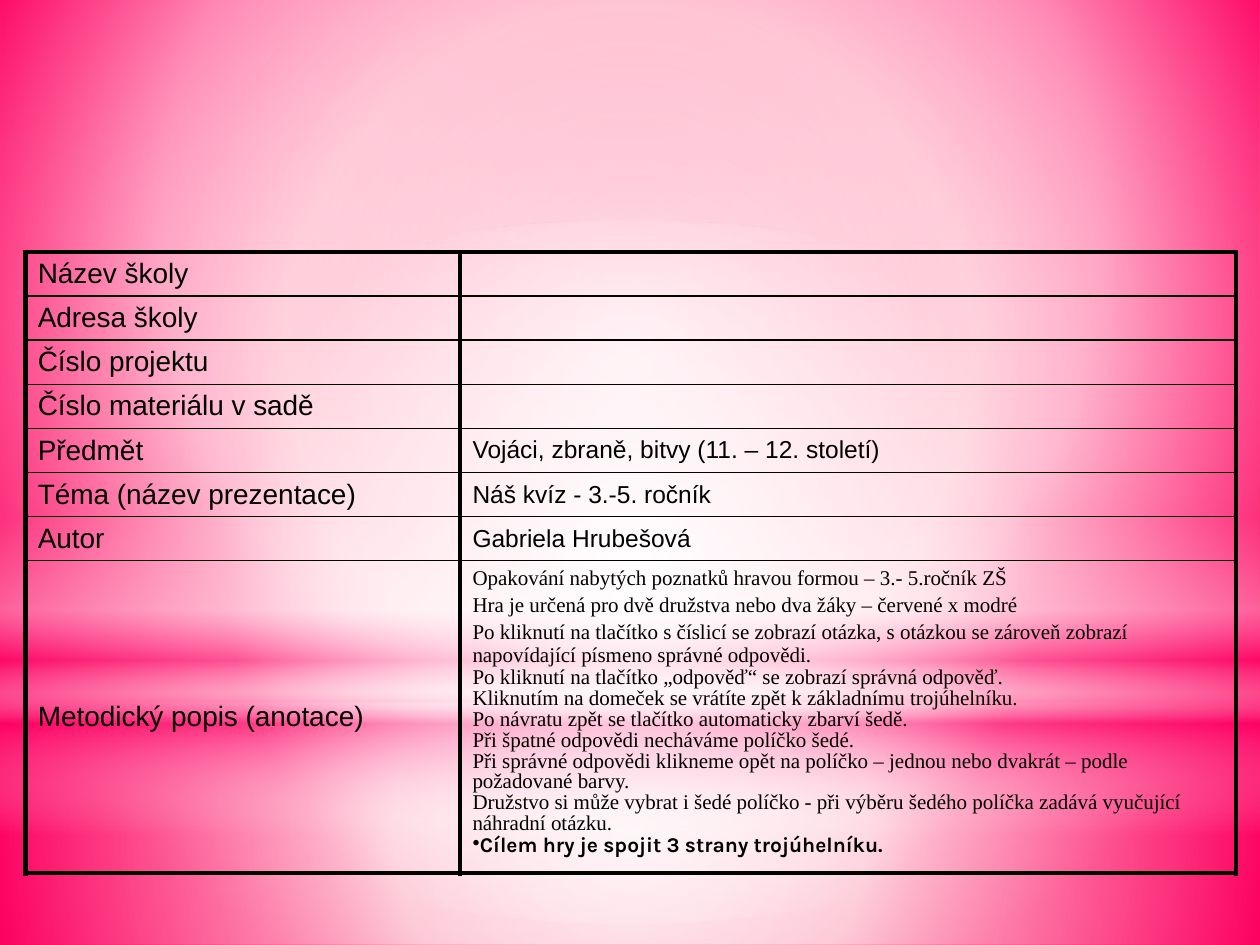
import lxml.etree
import pptx
import pptx.dml.color
import pptx.enum.shapes
import pptx.enum.text
import pptx.oxml.ns
import pptx.util

Inches = pptx.util.Inches
qn = pptx.oxml.ns.qn

COLORS = {"ink": "000000", "white": "FFFFFF", "pink": "FF0066",
          "rose": "FF2163", "blush": "FFA7BD", "crimson": "F80045"}

# Gradient stops: position, colour, opacity (all percentages)
BACKGROUND = [(0, "rose", 100), (60, "blush", 100), (100, "crimson", 100)]
CENTER = (50, 50, 50, 50)
# Shape, (left, top, width, height), stops, focus (None means a vertical linear gradient)
GLOWS = [
    ("RECTANGLE", (0, 5.58, 10, 1.92),
     [(0, "white", 91), (37, "white", 76), (100, "pink", 79)], CENTER),
    ("RECTANGLE", (0, 0, 10, 5.58),
     [(0, "white", 89), (48, "white", 62), (100, "pink", 79)], CENTER),
    ("RECTANGLE", (0, 4.12, 10, 2.5),
     [(0, "white", 0), (29, "white", 30), (45, "pink", 40), (55, "white", 26),
      (65, "pink", 60), (100, "white", 0)], None),
    ("OVAL", (0, 1.75, 10, 5.58), [(0, "white", 100), (56, "white", 0)], CENTER),
]

ROWS = [
    ("Název školy", ""),
    ("Adresa školy", ""),
    ("Číslo projektu", ""),
    ("Číslo materiálu v sadě", ""),
    ("Předmět", "Vojáci, zbraně, bitvy (11. – 12. století)"),
    ("Téma (název prezentace)", "Náš kvíz - 3.-5. ročník"),
    ("Autor", "Gabriela Hrubešová"),
]
NOTE_LABEL = "Metodický popis (anotace)"
INTRO = [
    "Opakování nabytých poznatků hravou formou – 3.- 5.ročník ZŠ",
    "Hra je určená pro dvě družstva nebo dva žáky – červené x modré",
    "Po kliknutí na tlačítko s číslicí se zobrazí otázka, s otázkou se zároveň "
    "zobrazí napovídající písmeno správné odpovědi.",
]
RULES = [
    "Po kliknutí na tlačítko „odpověď“ se zobrazí správná odpověď.",
    "Kliknutím na domeček se vrátíte zpět k základnímu trojúhelníku.",
    "Po návratu zpět se tlačítko automaticky zbarví šedě.",
    "Při špatné odpovědi necháváme políčko šedé.",
    "Při správné odpovědi klikneme opět na políčko – jednou nebo dvakrát – podle "
    "požadované barvy.",
    "Družstvo si může vybrat i šedé políčko - při výběru šedého políčka zadává "
    "vyučující náhradní otázku.",
]
GOAL = "Cílem hry je spojit 3 strany trojúhelníku."

TABLE_LEFT, TABLE_TOP = 0.2, 2
COLUMN_WIDTHS = (3.45, 6.16)
ROW_HEIGHT, NOTE_HEIGHT = 0.35, 2.48


def add_node(parent, tag, **attributes):
    node = lxml.etree.SubElement(parent, qn(tag))
    for name, value in attributes.items():
        node.set(name, str(value))
    return node


def set_gradient(fill, owner, stops, focus):
    """Fill with stops that carry opacity; focus is left, top, right, bottom in percent."""
    fill.gradient()
    gradient = owner.find(".//" + qn("a:gradFill"))
    for child in list(gradient):
        gradient.remove(child)
    stop_list = add_node(gradient, "a:gsLst")
    for position, color, opacity in stops:
        stop = add_node(stop_list, "a:gs", pos=position * 1000)
        tint = add_node(stop, "a:srgbClr", val=COLORS[color])
        if opacity < 100:
            add_node(tint, "a:alpha", val=opacity * 1000)
    if focus is None:
        add_node(gradient, "a:lin", ang=90 * 60000, scaled=0)
    else:
        circle = add_node(gradient, "a:path", path="circle")
        add_node(circle, "a:fillToRect",
                 **{side: share * 1000 for side, share in zip("ltrb", focus)})


def write(para, text, size=16, font="Arial", bold=False, before=0, spacing=None, bullet=None):
    para.space_before = pptx.util.Pt(before)
    if spacing:
        para.line_spacing = spacing
    if bullet:
        add_node(para._p.get_or_add_pPr(), "a:buChar", char=bullet)
    if not text:
        add_node(para._p, "a:endParaRPr", sz=size * 100)
        return
    span = para.add_run()
    span.text = text
    span.font.size = pptx.util.Pt(size)
    span.font.name = font
    span.font.bold = bold
    span.font.color.rgb = pptx.dml.color.RGBColor.from_string(COLORS["ink"])


def style_cell(cell, top, bottom):
    """Clear the fill and draw thick sides with the given top and bottom widths."""
    properties = cell._tc.get_or_add_tcPr()
    for side, width in zip("LRTB", (3, 3, top, bottom)):
        line = add_node(properties, "a:ln" + side, w=pptx.util.Pt(width))
        add_node(add_node(line, "a:solidFill"), "a:srgbClr", val=COLORS["ink"])
    cell.fill.background()
    cell.vertical_anchor = pptx.enum.text.MSO_ANCHOR.MIDDLE


def add_glows(slide):
    for kind, place, stops, focus in GLOWS:
        glow = slide.shapes.add_shape(pptx.enum.shapes.MSO_SHAPE[kind], *map(Inches, place))
        glow.shadow.inherit = False
        glow.line.fill.background()
        set_gradient(glow.fill, glow.element, stops, focus)


def add_info_table(slide):
    heights = [ROW_HEIGHT] * len(ROWS) + [NOTE_HEIGHT]
    table = slide.shapes.add_table(
        len(heights), 2, Inches(TABLE_LEFT), Inches(TABLE_TOP),
        Inches(sum(COLUMN_WIDTHS)), Inches(sum(heights))).table
    table.first_row = table.horz_banding = False
    for column, width in zip(table.columns, COLUMN_WIDTHS):
        column.width = Inches(width)
    last = len(heights) - 1
    for index, height in enumerate(heights):
        table.rows[index].height = Inches(height)
        for cell in table.rows[index].cells:
            style_cell(cell, 3 if index == 0 else 1, 3 if index == last else 1)
    for index, (label, value) in enumerate(ROWS):
        write(table.cell(index, 0).text_frame.paragraphs[0], label)
        write(table.cell(index, 1).text_frame.paragraphs[0], value, size=14)
    write(table.cell(last, 0).text_frame.paragraphs[0], NOTE_LABEL)

    note = table.cell(last, 1)
    note.vertical_anchor = pptx.enum.text.MSO_ANCHOR.TOP
    frame = note.text_frame
    serif = {"size": 12, "font": "Times New Roman"}
    write(frame.paragraphs[0], INTRO[0], **serif)
    for text in INTRO[1:]:
        write(frame.add_paragraph(), text, before=2, **serif)
    for text in RULES:
        write(frame.add_paragraph(), text, spacing=0.9, **serif)
    write(frame.add_paragraph(), GOAL, size=12, font="Karla", bold=True,
          spacing=0.9, bullet="•")


def main():
    deck = pptx.Presentation()
    deck.slide_width, deck.slide_height = Inches(10), Inches(7.5)
    slide = deck.slides.add_slide(deck.slide_layouts[6])
    set_gradient(slide.background.fill, slide.element, BACKGROUND, (20, 10, 20, 60))
    add_glows(slide)
    add_info_table(slide)
    deck.save("out.pptx")


if __name__ == "__main__":
    main()
